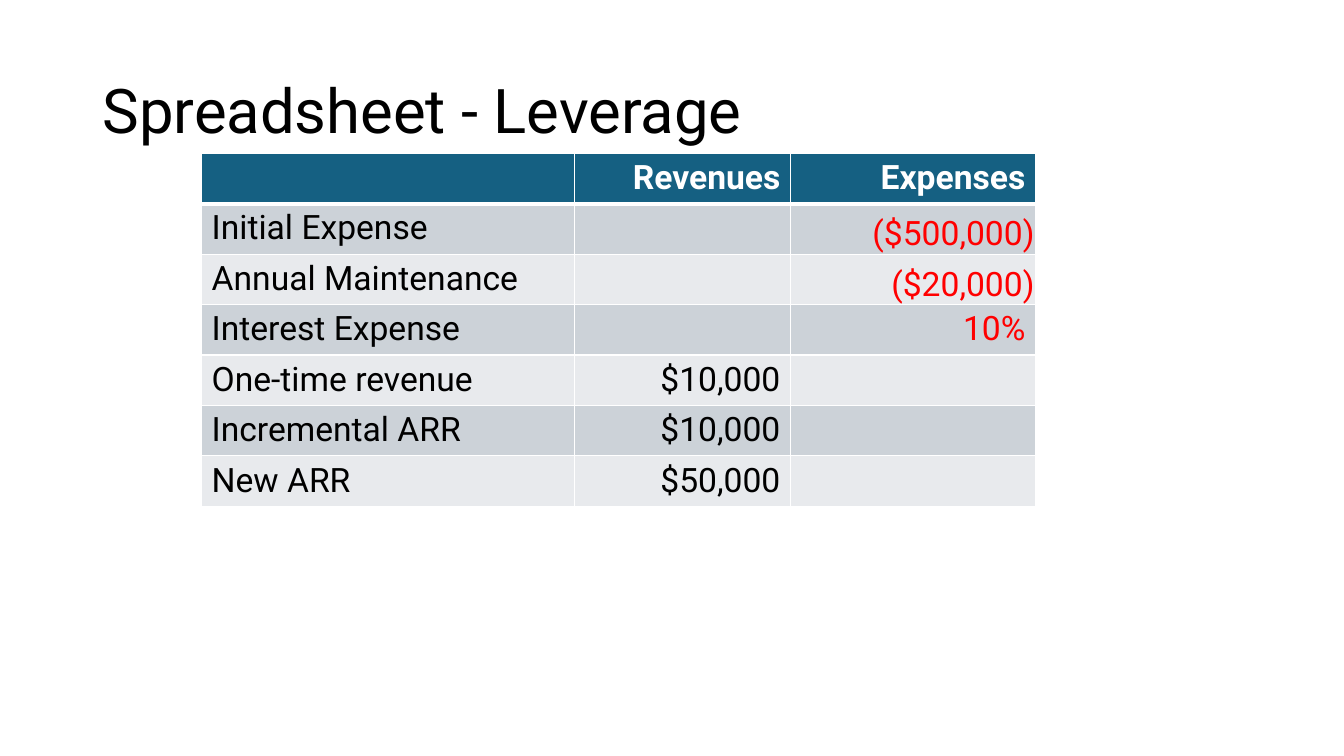
from lxml.etree import SubElement
from pptx import Presentation
from pptx.dml.color import RGBColor as RGB
from pptx.enum.text import MSO_ANCHOR as ANCHOR, PP_ALIGN as ALIGN
from pptx.oxml.ns import qn
from pptx.util import Inches, Pt

# Content
TITLE = "Spreadsheet - Leverage"
ROWS = [
    ("", "Revenues", "Expenses"),
    ("Initial Expense", "", "($500,000)"),
    ("Annual Maintenance", "", "($20,000)"),
    ("Interest Expense", "", "10%"),
    ("One-time revenue", "$10,000", ""),
    ("Incremental ARR", "$10,000", ""),
    ("New ARR", "$50,000", ""),
]
COL_WIDTHS = (3.7, 2.14, 2.43)
ROW_HEIGHT = 0.41
FONT = "Roboto"
COLORS = {
    "header": "156082",
    "odd": "CCD2D8",
    "even": "E8EAED",
    "white": "FFFFFF",
    "text": "000000",
    "expense": "FF0000",
}


def style(p, size, color, bold=False):
    for r in p.runs:
        r.font.name = FONT
        r.font.size = Pt(size)
        r.font.bold = bold
        r.font.color.rgb = RGB.from_string(COLORS[color])


def add_borders(cell, bottom):
    tc_pr = cell._tc.get_or_add_tcPr()
    for side, width in (("L", 1), ("R", 1), ("T", 1), ("B", bottom)):
        ln = SubElement(tc_pr, qn(f"a:ln{side}"), w=str(Pt(width)))
        fill = SubElement(ln, qn("a:solidFill"))
        SubElement(fill, qn("a:srgbClr"), val=COLORS["white"])


prs = Presentation()
prs.slide_width, prs.slide_height = Inches(13.33), Inches(7.5)
s = prs.slides.add_slide(prs.slide_layouts[6])

# Title
tf = s.shapes.add_textbox(Inches(0.92), Inches(0.4), Inches(11.5), Inches(1.45)).text_frame
tf.word_wrap = True
tf.vertical_anchor = ANCHOR.MIDDLE
p = tf.paragraphs[0]
p.text = TITLE
p.line_spacing = 0.9
style(p, 44, "text")

# Table
table = s.shapes.add_table(
    len(ROWS), len(COL_WIDTHS), Inches(2), Inches(1.52),
    Inches(sum(COL_WIDTHS)), Inches(ROW_HEIGHT * len(ROWS))).table
for column, width in zip(table.columns, COL_WIDTHS):
    column.width = Inches(width)

for i, row in enumerate(ROWS):
    table.rows[i].height = Inches(ROW_HEIGHT)
    header = i == 0
    band = "header" if header else "odd" if i % 2 else "even"
    for j, text in enumerate(row):
        cell = table.cell(i, j)
        add_borders(cell, 3 if header or i == len(ROWS) and header else 1)
        cell.fill.solid()
        cell.fill.fore_color.rgb = RGB.from_string(COLORS[band])
        p = cell.text_frame.paragraphs[0]
        p.text = text
        p.alignment = ALIGN.RIGHT if j else ALIGN.LEFT
        style(p, 24, "white" if header else "expense" if j == 2 else "text", header)
        # Amounts in parentheses sit tight in the bottom corner
        if text.startswith("("):
            cell.vertical_anchor = ANCHOR.BOTTOM
            cell.margin_left = cell.margin_top = cell.margin_right = Inches(0.01)
            cell.margin_bottom = 0

prs.save("out.pptx")
